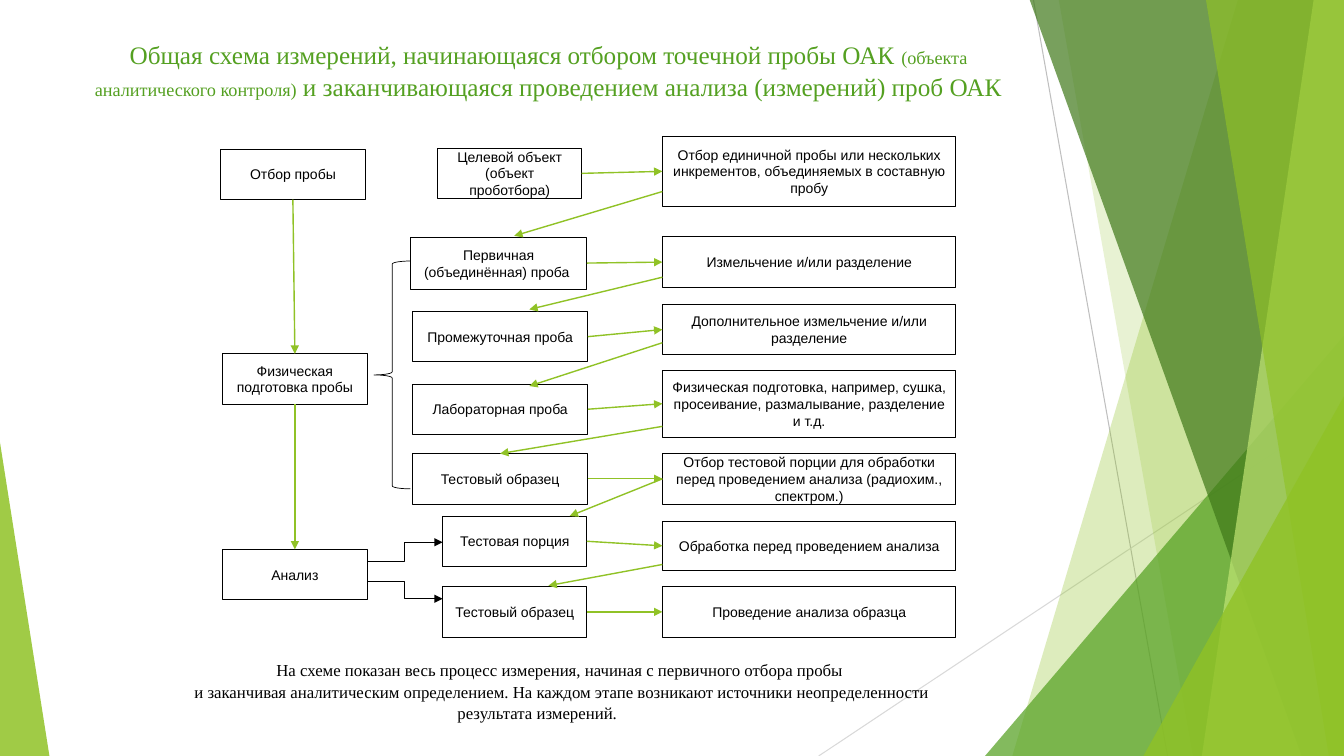
from dataclasses import dataclass
from itertools import pairwise
from lxml.etree import SubElement
from pptx import Presentation
from pptx.dml.color import RGBColor
from pptx.enum.shapes import MSO_CONNECTOR, MSO_SHAPE
from pptx.enum.text import MSO_ANCHOR, MSO_AUTO_SIZE, PP_ALIGN
from pptx.oxml.ns import qn
from pptx.util import Inches, Pt

TOP, LEFT, BOTTOM, RIGHT = range(4)
WIDTH, HEIGHT = 13.33, 7.5


@dataclass(frozen=True)
class Theme:
    ink: str = "000000"
    lime: str = "90C226"
    green: str = "54A021"
    forest: str = "3F7819"
    pale: str = "C0E474"
    gray: str = "BFBFBF"
    mist: str = "D9D9D9"
    sans: str = "Arial"
    serif: str = "Times New Roman"
    head: float = 18
    small: float = 13
    note: float = 12
    body: float = 10
    thin: float = 0.5
    hair: float = 0.75
    flow: float = 1
    lead: float = 1.07


class Board:
    def __init__(self, slide, theme):
        self.slide, self.theme = slide, theme
        self.shapes = slide.shapes

    def put(self, item, values):
        for name, value in values.items():
            setattr(item, name, value)

    def label(self, para, text, face, size, color):
        run = para.add_run()
        run.text = text
        self.put(run.font, {"name": face, "size": Pt(size)})
        run.font.color.rgb = RGBColor.from_string(color)

    def title(self, area, runs):
        shape = self.shapes.title
        names = ("left", "top", "width", "height")
        self.put(shape, dict(zip(names, map(Inches, area))))
        self.put(shape.text_frame, {
            "word_wrap": True, "auto_size": MSO_AUTO_SIZE.NONE,
            "vertical_anchor": MSO_ANCHOR.TOP})
        para = shape.text_frame.paragraphs[0]
        self.put(para, {"alignment": PP_ALIGN.CENTER,
                        "line_spacing": self.theme.lead})
        for text, size in runs:
            self.label(para, text, self.theme.serif, size, self.theme.green)

    def tint(self, shape, color, alpha):
        """Fill without outline, at alpha percent opacity."""
        shape.shadow.inherit = False
        shape.fill.solid()
        shape.fill.fore_color.rgb = RGBColor.from_string(color)
        shape.line.fill.background()
        tone = shape.element.spPr.find(qn("a:solidFill"))[0]
        SubElement(tone, qn("a:alpha"), val=str(alpha * 1000))

    def band(self, top, base, color, alpha):
        """Strip from a slanted left edge to the right side of the slide."""
        spots = [(top, -0.01), (WIDTH, -0.01), (WIDTH, HEIGHT), (base, HEIGHT)]
        first, *rest = [(Inches(x), Inches(y)) for x, y in spots]
        edge = self.shapes.build_freeform(*first)
        edge.add_line_segments(rest, close=True)
        self.tint(edge.convert_to_shape(), color, alpha)

    def wedge(self, area, tip, color, alpha):
        shape = self.shapes.add_shape(MSO_SHAPE.ISOSCELES_TRIANGLE, *map(Inches, area))
        shape.adjustments[0] = tip
        self.tint(shape, color, alpha)

    def frame(self, kind, area):
        """Unfilled shape with a thin dark outline."""
        shape = self.shapes.add_shape(kind, *map(Inches, area))
        shape.shadow.inherit = False
        shape.fill.background()
        shape.line.color.rgb = RGBColor.from_string(self.theme.ink)
        shape.line.width = Pt(self.theme.thin)
        return shape

    def box(self, text, *area):
        shape = self.frame(MSO_SHAPE.RECTANGLE, area)
        self.put(shape.text_frame, {
            "word_wrap": True, "vertical_anchor": MSO_ANCHOR.MIDDLE})
        para = shape.text_frame.paragraphs[0]
        para.alignment = PP_ALIGN.CENTER
        self.label(para, text, self.theme.sans, self.theme.body, self.theme.ink)
        return shape

    def brace(self, area):
        shape = self.frame(MSO_SHAPE.LEFT_BRACE, area)
        shape.adjustments[0] = 0.084

    def line(self, start, end, color, width, arrow=True, kind=MSO_CONNECTOR.STRAIGHT):
        """Each end is an (x, y) point or a (shape, site) pair."""
        ends = (start, end)
        glued = [not isinstance(a, (int, float)) for a, _ in ends]
        spots = [(0, 0) if glue else spot for spot, glue in zip(ends, glued)]
        link = self.shapes.add_connector(
            kind, *[Inches(v) for spot in spots for v in spot])
        for join, spot, glue in zip((link.begin_connect, link.end_connect), ends, glued):
            if glue:
                join(*spot)
        link.line.color.rgb = RGBColor.from_string(color)
        link.line.width = Pt(width)
        props = link.element.spPr
        if arrow:
            SubElement(props.find(qn("a:ln")), qn("a:tailEnd"), type="triangle")
        SubElement(props, qn("a:effectLst"))

    def note(self, area, texts):
        frame = self.shapes.add_textbox(*map(Inches, area)).text_frame
        self.put(frame, {"word_wrap": True, "vertical_anchor": MSO_ANCHOR.MIDDLE,
                         "auto_size": MSO_AUTO_SIZE.SHAPE_TO_FIT_TEXT})
        for i, text in enumerate(texts):
            para = frame.add_paragraph() if i else frame.paragraphs[0]
            self.put(para, {"alignment": PP_ALIGN.CENTER,
                            "line_spacing": self.theme.lead})
            props = para._p.get_or_add_pPr()
            props.set("marL", "0")
            props.set("indent", str(Inches(0.49)))
            self.label(para, text, self.theme.serif, self.theme.note, self.theme.ink)


def decor(board):
    t = board.theme
    board.line((10.25, 0), (11.58, HEIGHT), t.gray, t.hair, arrow=False)
    board.line((WIDTH, 4.03), (8.12, HEIGHT), t.mist, t.hair, arrow=False)
    board.band(12.28, 10.04, t.lime, 30)
    board.band(10.5, 11.83, t.lime, 20)
    board.wedge((9.77, 3.33, 3.56, 4.17), 1, t.green, 72)
    board.band(10.21, 12.91, t.forest, 70)
    board.band(13.03, 11.92, t.pale, 70)
    board.band(11.96, 13.18, t.lime, 65)
    board.wedge((11.34, 3.93, 1.99, 3.57), 1, t.lime, 80)
    board.wedge((0, 4.39, 0.49, 3.11), 0, t.lime, 85)


def stages(board):
    t = board.theme
    steps = [board.box(text, x, y, 1.43, 0.5) for text, x, y in (
        ("Отбор пробы", 2.19, 1.48),
        ("Физическая подготовка пробы", 2.21, 3.51),
        ("Анализ", 2.21, 5.45))]
    for one, two in pairwise(steps):
        board.line((one, BOTTOM), (two, TOP), t.lime, t.flow)
    for y, end in ((5.57, 5.38), (5.77, 5.94)):
        board.line((3.64, y), (4.39, end), t.ink, t.thin, kind=MSO_CONNECTOR.ELBOW)
    board.brace((3.71, 2.59, 0.36, 2.26))


def flow(board):
    t = board.theme
    # sample: text, left, top, width, height; action: text, top, height
    rows = [
        (("Целевой объект (объект проботбора)", 4.34, 1.47, 1.43, 0.5),
         ("Отбор единичной пробы или нескольких инкрементов, "
          "объединяемых в составную пробу", 1.35, 0.7)),
        (("Первичная (объединённая) проба ", 4.07, 2.35, 1.75, 0.52),
         ("Измельчение и/или разделение", 2.35, 0.5)),
        (("Промежуточная проба", 4.09, 3.09, 1.74, 0.5),
         ("Дополнительное измельчение и/или разделение", 3.02, 0.5)),
        (("Лабораторная проба", 4.09, 3.81, 1.74, 0.5),
         ("Физическая подготовка, например, сушка, просеивание, "
          "размалывание, разделение и т.д.", 3.67, 0.67)),
        (("Тестовый образец", 4.09, 4.5, 1.74, 0.5),
         ("Отбор тестовой порции для обработки перед проведением "
          "анализа (радиохим., спектром.)", 4.5, 0.5)),
        (("Тестовая порция", 4.39, 5.12, 1.43, 0.5),
         ("Обработка перед проведением анализа", 5.17, 0.49)),
        (("Тестовый образец", 4.39, 5.82, 1.43, 0.5),
         ("Проведение анализа образца", 5.82, 0.5))]
    pairs = []
    for sample, (text, y, high) in rows:
        pair = board.box(*sample), board.box(text, 6.57, y, 2.91, high)
        board.line((pair[0], RIGHT), (pair[1], LEFT), t.lime, t.flow)
        pairs.append(pair)
    backs = [((6.57, 1.9), (5.1, 2.34)), ((6.57, 2.75), (5.25, 3.07)),
             ((6.57, 3.4), (5.25, 3.83)), ((6.57, 4.23), (pairs[4][0], TOP)),
             ((pairs[4][1], LEFT), (5.65, 5.12)), ((6.57, 5.6), (5.44, 5.81))]
    for start, end in backs:
        board.line(start, end, t.lime, t.flow)


def main():
    deck = Presentation()
    deck.slide_width, deck.slide_height = Inches(WIDTH), Inches(HEIGHT)
    t = Theme()
    board = Board(deck.slides.add_slide(deck.slide_layouts[5]), t)
    decor(board)
    board.title((0.74, 0.32, 9.4, 0.91), [
        ("Общая схема измерений, начинающаяся отбором точечной пробы ОАК ", t.head),
        ("(объекта аналитического контроля)", t.small),
        (" и заканчивающаяся проведением анализа (измерений) проб ОАК", t.head)])
    stages(board)
    flow(board)
    board.note((1.18, 6.5, 8.3, 0.71), [
        "На схеме показан весь процесс измерения, начиная с первичного отбора пробы ",
        "и заканчивая аналитическим определением. На каждом этапе возникают "
        "источники неопределенности результата измерений."])
    deck.save("out.pptx")


if __name__ == "__main__":
    main()
